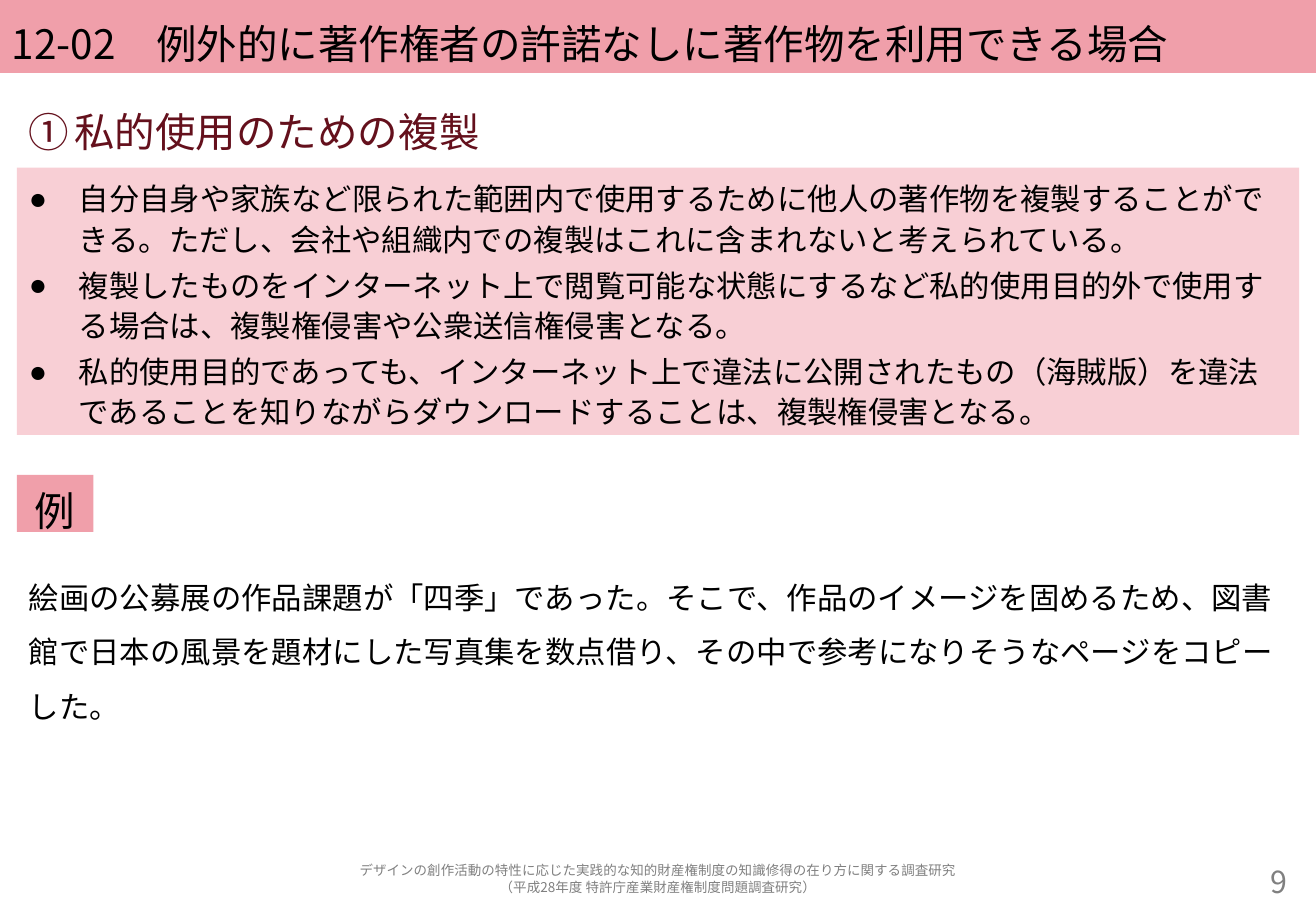
import pptx
import pptx.util
import pptx.dml.color
import pptx.enum.shapes
import pptx.enum.text
import pptx.oxml.ns
import lxml.etree

Pt = pptx.util.Pt
ALIGN = pptx.enum.text.PP_ALIGN
ANCHOR = pptx.enum.text.MSO_ANCHOR
FONT = "Noto Sans CJK JP"
COLORS = {"band": "F09FAA", "panel": "F8CFD5", "ink": "000000",
          "heading": "64101C", "muted": "808080"}
PAGE_WIDTH, PAGE_HEIGHT = 779.76, 540
MARGIN, CONTENT_WIDTH = 10, 759.76
LINE_HEIGHT = 1.2  # height of a single line, as a share of the text size


def rgb(name):
    return pptx.dml.color.RGBColor.from_string(COLORS[name])


def add_box(page, area, fill=None):
    left, top, width, height = (Pt(length) for length in area)
    if fill is None:
        return page.shapes.add_textbox(left, top, width, height)
    box = page.shapes.add_shape(
        pptx.enum.shapes.MSO_SHAPE.RECTANGLE, left, top, width, height)
    box.shadow.inherit = False
    box.fill.solid()
    box.fill.fore_color.rgb = rgb(fill)
    box.line.fill.background()
    return box


def write(box, texts, size, color="ink", align=ALIGN.LEFT,
          anchor=ANCHOR.TOP, spacing=1.1, before=0):
    frame = box.text_frame
    frame.word_wrap = True
    frame.vertical_anchor = anchor
    frame.margin_left = frame.margin_right = Pt(7.2)
    # Exact line heights sit slightly high, so the insets move the text down
    frame.margin_top = Pt(3.6 + size * 0.1)
    frame.margin_bottom = Pt(3.6 - size * 0.1)
    for index, text in enumerate(texts):
        para = frame.add_paragraph() if index else frame.paragraphs[0]
        para.text = text
        para.alignment = align
        para.line_spacing = Pt(round(size * LINE_HEIGHT * spacing, 1))
        para.space_before = Pt(before if index else 0)
        para.font.size = Pt(size)
        para.font.name = FONT
        para.font.color.rgb = rgb(color)
        for span in para.runs:
            span.font.name = FONT
            east_asian = lxml.etree.SubElement(
                span.font._element, pptx.oxml.ns.qn("a:ea"))
            east_asian.set("typeface", FONT)
    return frame.paragraphs


def add_bullets(paras, indent, tag, font=None, **settings):
    for para in paras:
        properties = para._p.get_or_add_pPr()
        properties.set("marL", str(Pt(indent)))
        properties.set("indent", str(-Pt(indent)))
        marks = [(tag, settings)]
        if font:
            marks.insert(0, ("a:buFont", {"typeface": font}))
        default_font = properties.find(pptx.oxml.ns.qn("a:defRPr"))
        for name, values in marks:
            mark = lxml.etree.Element(pptx.oxml.ns.qn(name), values)
            default_font.addprevious(mark)


def add_title(page, area):
    write(add_box(page, area, "band"),
          ["12-02　例外的に著作権者の許諾なしに著作物を利用できる場合"],
          24, anchor=ANCHOR.MIDDLE)


def add_rules(page, area):
    left, top, width, height = area
    # Numbered heading
    paras = write(add_box(page, (left, top, width, 33.8)),
                  ["私的使用のための複製"], 24, "heading")
    add_bullets(paras, 27, "a:buAutoNum", type="circleNumDbPlain")
    # Panel of rules
    panel = add_box(page, (left, top + 44.6, width, height - 44.6), "panel")
    paras = write(panel, [
        "自分自身や家族など限られた範囲内で使用するために他人の著作物を複製することができる。"
        "ただし、会社や組織内での複製はこれに含まれないと考えられている。",
        "複製したものをインターネット上で閲覧可能な状態にするなど私的使用目的外で使用する場合は、"
        "複製権侵害や公衆送信権侵害となる。",
        "私的使用目的であっても、インターネット上で違法に公開されたもの（海賊版）を"
        "違法であることを知りながらダウンロードすることは、複製権侵害となる。",
    ], 18, before=3.6)
    add_bullets(paras, 29.5, "a:buChar", font="Arial", char="●")


def add_example(page, area):
    left, top, width, height = area
    # Label
    write(add_box(page, (left, top, 45.4, 33.8), "band"), ["例"], 24,
          align=ALIGN.CENTER, anchor=ANCHOR.MIDDLE)
    # Story
    write(add_box(page, (left, top + 45.4, width, height - 45.4)), [
        "絵画の公募展の作品課題が「四季」であった。そこで、作品のイメージを固めるため、"
        "図書館で日本の風景を題材にした写真集を数点借り、"
        "その中で参考になりそうなページをコピーした。"], 18, spacing=1.5)


def add_footer(page, area):
    left, top, width, height = area
    # Source
    write(add_box(page, area), [
        "デザインの創作活動の特性に応じた実践的な知的財産権制度の知識修得の在り方に関する調査研究",
        "（平成28年度 特許庁産業財産権制度問題調査研究）",
    ], 8, "muted", ALIGN.CENTER, ANCHOR.MIDDLE)
    # Page number
    number_width = 96.5
    write(add_box(page, (left + width - number_width, top, number_width, height)),
          ["9"], 18, "muted", ALIGN.RIGHT, ANCHOR.MIDDLE)


def main():
    deck = pptx.Presentation()
    deck.slide_width, deck.slide_height = Pt(PAGE_WIDTH), Pt(PAGE_HEIGHT)
    page = deck.slides.add_slide(deck.slide_layouts[6])
    add_title(page, (0, 0, PAGE_WIDTH, 43.2))
    add_rules(page, (MARGIN, 54.8, CONTENT_WIDTH, 203))
    add_example(page, (MARGIN, 281.5, CONTENT_WIDTH, 215.4))
    add_footer(page, (MARGIN, 508.3, CONTENT_WIDTH, 22.3))
    deck.save("out.pptx")


if __name__ == "__main__":
    main()
